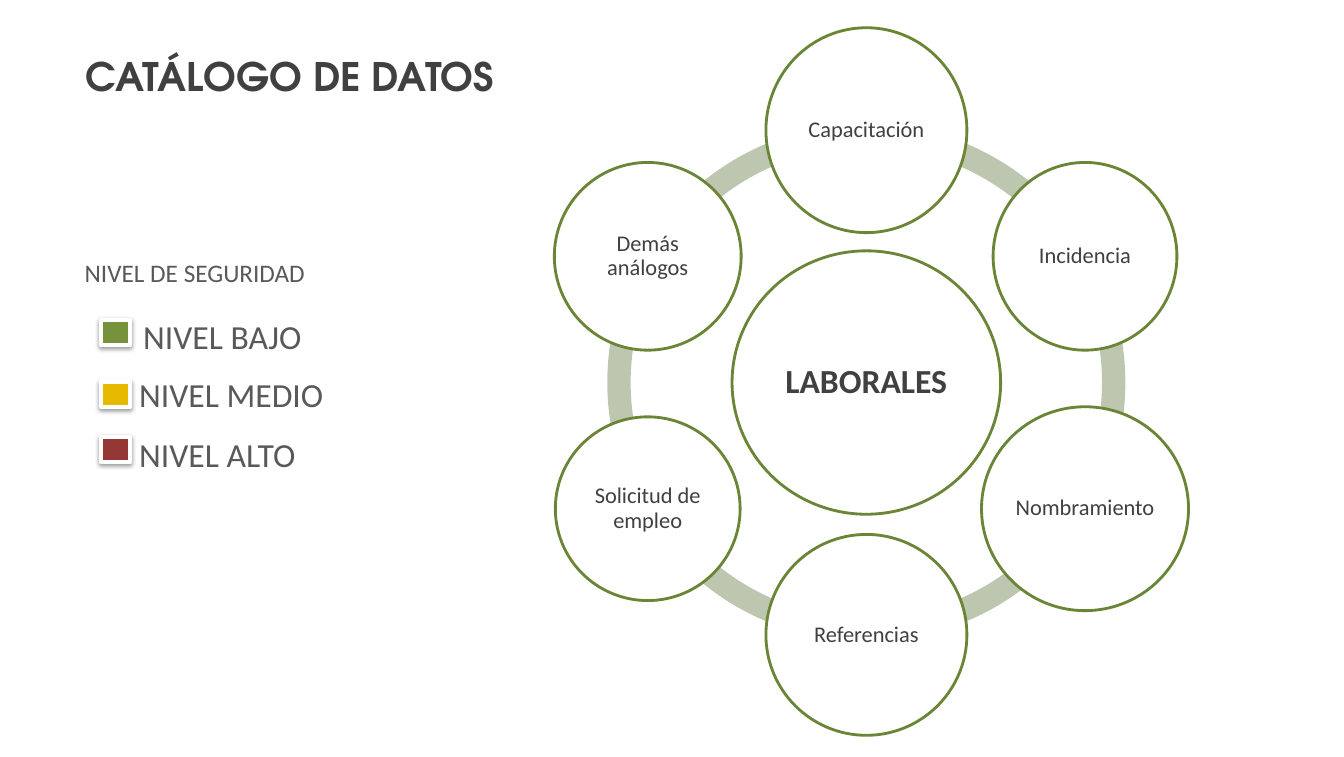
from math import cos, radians, sin

from lxml import etree
from pptx import Presentation
from pptx.dml.color import RGBColor
from pptx.enum.shapes import MSO_SHAPE
from pptx.enum.text import MSO_ANCHOR, PP_ALIGN
from pptx.util import Inches, Pt

OVAL = MSO_SHAPE.OVAL
RECTANGLE = MSO_SHAPE.RECTANGLE
BLOCK_ARC = MSO_SHAPE.BLOCK_ARC
MIDDLE = MSO_ANCHOR.MIDDLE
CENTER = PP_ALIGN.CENTER
LEFT = PP_ALIGN.LEFT

COLORS = {
    "white": "FFFFFF",
    "dark": "404040",
    "gray": "595959",
    "outline": "6B8536",
    "ring": "BDC7AF",
    "low": "76923C",
    "medium": "E6BA00",
    "high": "953734",
}
BODY_FONT = "Calibri"
TITLE_FONT = "TeX Gyre Adventor"
HUB_X, HUB_Y = 8.58, 3.79
ORBIT = 2.5
RING_SIZE = 5.13

LEVELS = [
    ("NIVEL BAJO", "low", 1.32, 3.08, 1.78, 3.17),
    ("NIVEL MEDIO", "medium", 1.28, 3.66, 2.04, 3.78),
    ("NIVEL ALTO", "high", 1.28, 4.25, 1.77, 4.33),
]
TOPICS = [
    ("Capacitación", 1.99, 2.03),
    ("Incidencia", 1.82, 1.86),
    ("Nombramiento", 2.05, 2.02),
    ("Referencias", 1.99, 1.99),
    ("Solicitud de empleo", 1.83, 1.82),
    ("Demás análogos", 1.85, 1.86),
]
A_NS = "http://schemas.openxmlformats.org/drawingml/2006/main"
SHADOW_XML = (
    f'<a:effectLst xmlns:a="{A_NS}">'
    '<a:outerShdw blurRad="40000" dist="20000" dir="5400000" rotWithShape="0">'
    '<a:srgbClr val="000000"><a:alpha val="38000"/></a:srgbClr>'
    "</a:outerShdw></a:effectLst>"
)


def rgb(name):
    return RGBColor.from_string(COLORS[name])


def write(shape, text, size, color, align=LEFT, bold=False, font=BODY_FONT):
    frame = shape.text_frame
    frame.text = text
    para = frame.paragraphs[0]
    para.alignment = align
    span = para.runs[0]
    span.font.name = font
    span.font.size = Pt(size)
    span.font.bold = bold
    span.font.color.rgb = rgb(color)
    return para


def add_label(page, text, left, top, width, height, size):
    box = page.shapes.add_textbox(Inches(left), Inches(top), Inches(width), Inches(height))
    box.text_frame.word_wrap = False
    write(box, text, size, "gray")


def add_title(page, text):
    box = page.shapes.add_textbox(Inches(0.37), Inches(0.17), Inches(5), Inches(1.24))
    box.text_frame.word_wrap = True
    box.text_frame.vertical_anchor = MIDDLE
    para = write(box, text, 28, "dark", CENTER, True, TITLE_FONT)
    para.line_spacing = 0.8
    para.space_before = Pt(14.7)


def add_figure(page, kind, left, top, width, height, fill, line=None, weight=0):
    shape = page.shapes.add_shape(kind, Inches(left), Inches(top), Inches(width), Inches(height))
    shape.shadow.inherit = False
    shape.fill.solid()
    shape.fill.fore_color.rgb = rgb(fill)
    if line:
        shape.line.color.rgb = rgb(line)
        shape.line.width = Pt(weight)
    else:
        shape.line.fill.background()
    return shape


def add_swatch(page, top, color):
    swatch = add_figure(page, RECTANGLE, 1, top, 0.29, 0.25, color, "white", 3)
    properties = swatch.element.spPr
    properties.replace(properties.find(f"{{{A_NS}}}effectLst"), etree.fromstring(SHADOW_XML))


def add_ring_arc(page, start):
    half = RING_SIZE / 2
    arc = add_figure(page, BLOCK_ARC, HUB_X - half, HUB_Y - half, RING_SIZE, RING_SIZE, "ring")
    arc.adjustments[0] = start * 0.6
    arc.adjustments[1] = (start + 60) % 360 * 0.6
    arc.adjustments[2] = 0.045


def add_circle(page, text, center_x, center_y, width, height, size, bold=False):
    circle = add_figure(page, OVAL, center_x - width / 2, center_y - height / 2,
                        width, height, "white", "outline", 2)
    frame = circle.text_frame
    frame.word_wrap = True
    frame.vertical_anchor = MIDDLE
    frame.margin_left = frame.margin_right = Inches(0.02)
    frame.margin_top = frame.margin_bottom = Inches(0.02)
    write(circle, text, size, "dark", CENTER, bold).line_spacing = 0.9


def main():
    deck = Presentation()
    deck.slide_width = Inches(13.31)
    deck.slide_height = Inches(7.5)
    page = deck.slides.add_slide(deck.slide_layouts[6])

    add_title(page, "CATÁLOGO DE DATOS")
    add_label(page, "NIVEL DE SEGURIDAD", 0.74, 2.5, 2.41, 0.4, 18)
    for text, color, left, top, width, swatch_top in LEVELS:
        add_label(page, text, left, top, width, 0.5, 24)
        add_swatch(page, swatch_top, color)

    for start in range(30, 390, 60):
        add_ring_arc(page, start)
    add_circle(page, "LABORALES", HUB_X, HUB_Y, 2.66, 2.61, 24, True)
    for index, (text, width, height) in enumerate(TOPICS):
        angle = radians(60 * index - 90)
        add_circle(page, text, HUB_X + ORBIT * cos(angle), HUB_Y + ORBIT * sin(angle),
                   width, height, 16)

    deck.save("out.pptx")


if __name__ == "__main__":
    main()
